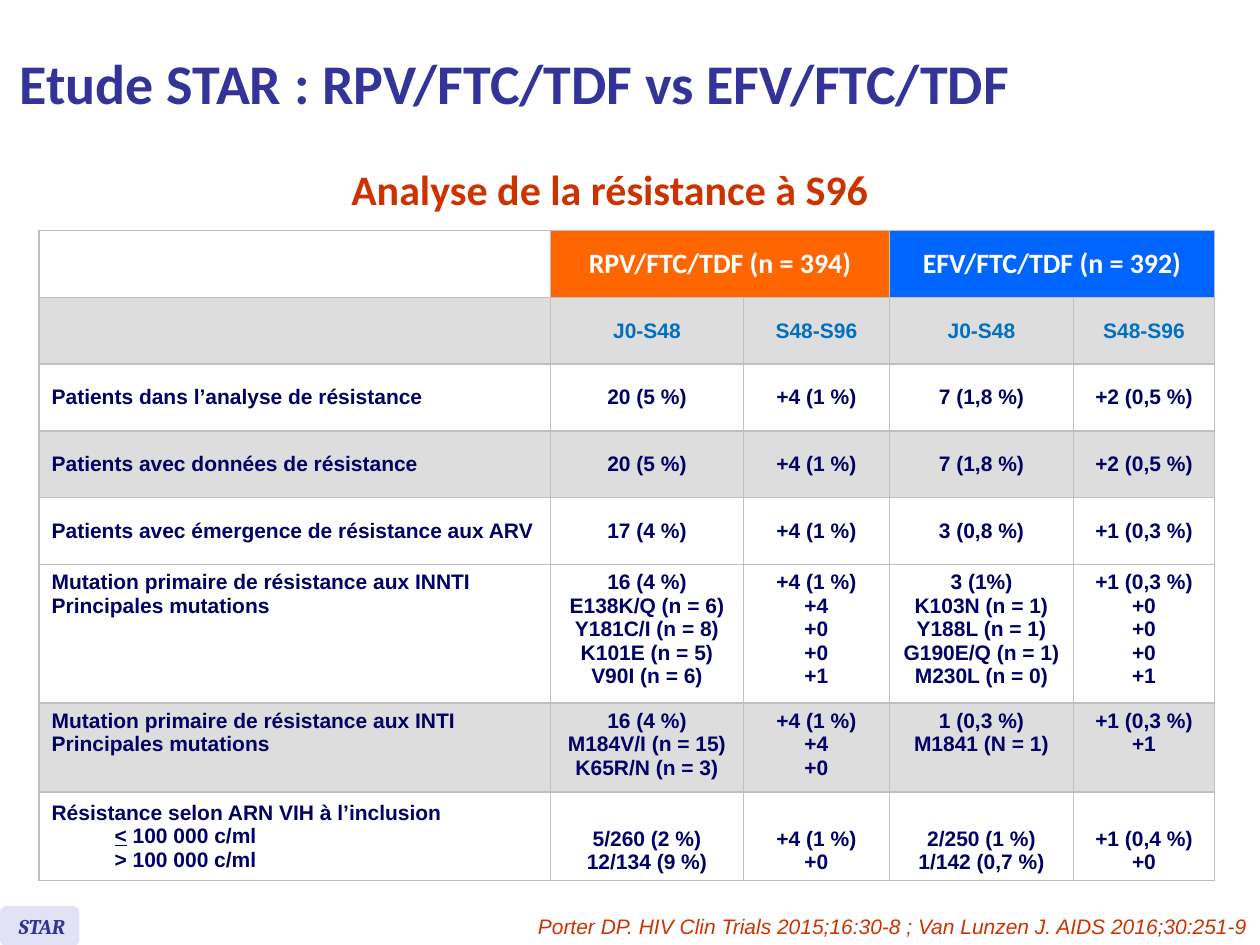
from lxml.etree import SubElement
from pptx import Presentation
from pptx.dml.color import RGBColor
from pptx.enum.shapes import MSO_SHAPE
from pptx.enum.text import MSO_ANCHOR, PP_ALIGN
from pptx.oxml.ns import qn
from pptx.util import Inches, Pt

HUES = {
    "title": "333399", "accent": "CC3300", "badge": "E2E2F6", "line": "C0C0C0",
    "rpv": "FF6600", "efv": "0066FF", "band": "DDDDDD", "white": "FFFFFF",
    "week": "0070C0", "ink": "000066",
}
SIDES = {"l": PP_ALIGN.LEFT, "c": PP_ALIGN.CENTER, "r": PP_ALIGN.RIGHT}
EDGES = {"t": MSO_ANCHOR.TOP, "m": MSO_ANCHOR.MIDDLE, "b": MSO_ANCHOR.BOTTOM}

COLS = (40.6, 15.3, 11.6, 14.6, 11.2)
ARMS = (("RPV/FTC/TDF (n = 394)", "rpv"), ("EFV/FTC/TDF (n = 392)", "efv"))
# Height, fill, anchor of first cell, anchor of the others, texts
ROWS = (
    (5.3, "band", "m", "m", ("", "J0-S48", "S48-S96", "J0-S48", "S48-S96")),
    (5.3, "white", "m", "m", ("Patients dans l’analyse de résistance",
     "20 (5 %)", "+4 (1 %)", "7 (1,8 %)", "+2 (0,5 %)")),
    (5.3, "band", "m", "m", ("Patients avec données de résistance",
     "20 (5 %)", "+4 (1 %)", "7 (1,8 %)", "+2 (0,5 %)")),
    (5.3, "white", "m", "m", ("Patients avec émergence de résistance aux ARV",
     "17 (4 %)", "+4 (1 %)", "3 (0,8 %)", "+1 (0,3 %)")),
    (11, "white", "t", "t", (
        "Mutation primaire de résistance aux INNTI\nPrincipales mutations",
        "16 (4 %)\nE138K/Q (n = 6)\nY181C/I (n = 8)\nK101E (n = 5)\nV90I (n = 6)",
        "+4 (1 %)\n+4\n+0\n+0\n+1",
        "3 (1%)\nK103N (n = 1)\nY188L (n = 1)\nG190E/Q (n = 1)\nM230L (n = 0)",
        "+1 (0,3 %)\n+0\n+0\n+0\n+1")),
    (7.05, "band", "t", "t", (
        "Mutation primaire de résistance aux INTI\nPrincipales mutations",
        "16 (4 %)\nM184V/I (n = 15)\nK65R/N (n = 3)", "+4 (1 %)\n+4\n+0",
        "1 (0,3 %)\nM1841 (N = 1)", "+1 (0,3 %)\n+1")),
    (7.05, "white", "m", "b", (
        "Résistance selon ARN VIH à l’inclusion\n\t_<_ 100 000 c/ml\n\t> 100 000 c/ml",
        "5/260 (2 %)\n12/134 (9 %)", "+4 (1 %)\n+0",
        "2/250 (1 %)\n1/142 (0,7 %)", "+1 (0,4 %)\n+0")),
)


def hue(name):
    return RGBColor.from_string(HUES[name])


def grid(count):
    """Turn grid units (100 columns by 75 rows) into a length."""
    return Inches(count / 10)


def write(frame, text, font="Arial", size=12, color="ink", bold=False,
          italic=False, side="l"):
    """Fill a frame: a tab indents a line, underscores enclose underlined text."""
    for i, line in enumerate(text.split("\n")):
        para = frame.add_paragraph() if i else frame.paragraphs[0]
        para.alignment = SIDES[side]
        if line.startswith("\t"):
            para.level = 1
            props = para._p.get_or_add_pPr()
            props.set("marL", str(grid(5)))
            props.set("indent", "0")
        for j, part in enumerate(line.strip("\t").split("_")):
            if not part:
                continue
            run = para.add_run()
            run.text = part
            run.font.name, run.font.size = font, Pt(size)
            run.font.bold, run.font.italic = bold, italic
            run.font.underline = j % 2 == 1
            run.font.color.rgb = hue(color)


class Deck:
    def __init__(self):
        self.show = Presentation()
        self.show.slide_width, self.show.slide_height = grid(100), grid(75)
        self.slide = self.show.slides.add_slide(self.show.slide_layouts[6])

    def label(self, box, text, edge="t", **style):
        shape = self.slide.shapes.add_textbox(*map(grid, box))
        frame = shape.text_frame
        frame.word_wrap = True
        frame.vertical_anchor = EDGES[edge]
        write(frame, text, **style)

    def badge(self, box, fill):
        shape = self.slide.shapes.add_shape(
            MSO_SHAPE.ROUNDED_RECTANGLE, *map(grid, box))
        shape.shadow.inherit = False
        shape.fill.solid()
        shape.fill.fore_color.rgb = hue(fill)
        shape.line.fill.background()

    def cell(self, cell, text="", fill=None, edge="m", **style):
        props = cell._tc.get_or_add_tcPr()
        for tag in ("a:lnL", "a:lnR", "a:lnT", "a:lnB"):
            line = SubElement(props, qn(tag), w=str(Pt(1)))
            paint = SubElement(line, qn("a:solidFill"))
            SubElement(paint, qn("a:srgbClr"), val=HUES["line"])
        if fill:
            cell.fill.solid()
            cell.fill.fore_color.rgb = hue(fill)
        else:
            cell.fill.background()
        cell.vertical_anchor = EDGES[edge]
        write(cell.text_frame, text, bold=True, **style)

    def table(self, left, top, cols, rows):
        box = (left, top, sum(cols), sum(rows))
        table = self.slide.shapes.add_table(
            len(rows), len(cols), *map(grid, box)).table
        table.first_row = table.horz_banding = False
        for col, width in zip(table.columns, cols):
            col.width = grid(width)
        for row, height in zip(table.rows, rows):
            row.height = grid(height)
        return table


def main():
    deck = Deck()
    deck.label((17.7, 11.8, 61.4, 6.4), "Analyse de la résistance à S96", edge="m",
               font="Calibri", size=24, color="accent", bold=True, side="c")
    deck.badge((0, 71.9, 6.3, 3.2), "badge")
    deck.label((0.5, 72, 6.1, 3), "STAR", font="Cambria", color="title",
               bold=True, italic=True)

    table = deck.table(3.1, 18.3, COLS, [5.3] + [row[0] for row in ROWS])
    deck.cell(table.cell(0, 0))
    for i, (name, fill) in enumerate(ARMS):
        first, last = (table.cell(0, 2 * i + k) for k in (1, 2))
        first.merge(last)
        deck.cell(first, name, fill, font="Calibri", size=16, color="white", side="c")
        deck.cell(last, fill=fill)
    for r, (_, fill, head, edge, texts) in enumerate(ROWS, 1):
        for c, text in enumerate(texts):
            deck.cell(table.cell(r, c), text, fill, edge if c else head,
                      color="week" if r == 1 else "ink", side="c" if c else "l")

    deck.label((0.6, 0.5, 95.5, 12.1), "Etude STAR : RPV/FTC/TDF vs EFV/FTC/TDF",
               edge="m", font="Calibri", size=32, color="title", bold=True)
    deck.label((36.4, 72, 63.6, 3), "Porter DP. HIV Clin Trials 2015;16:30-8 ; "
               "Van Lunzen J. AIDS 2016;30:251-9", color="accent", italic=True, side="r")
    deck.show.save("out.pptx")


if __name__ == "__main__":
    main()
